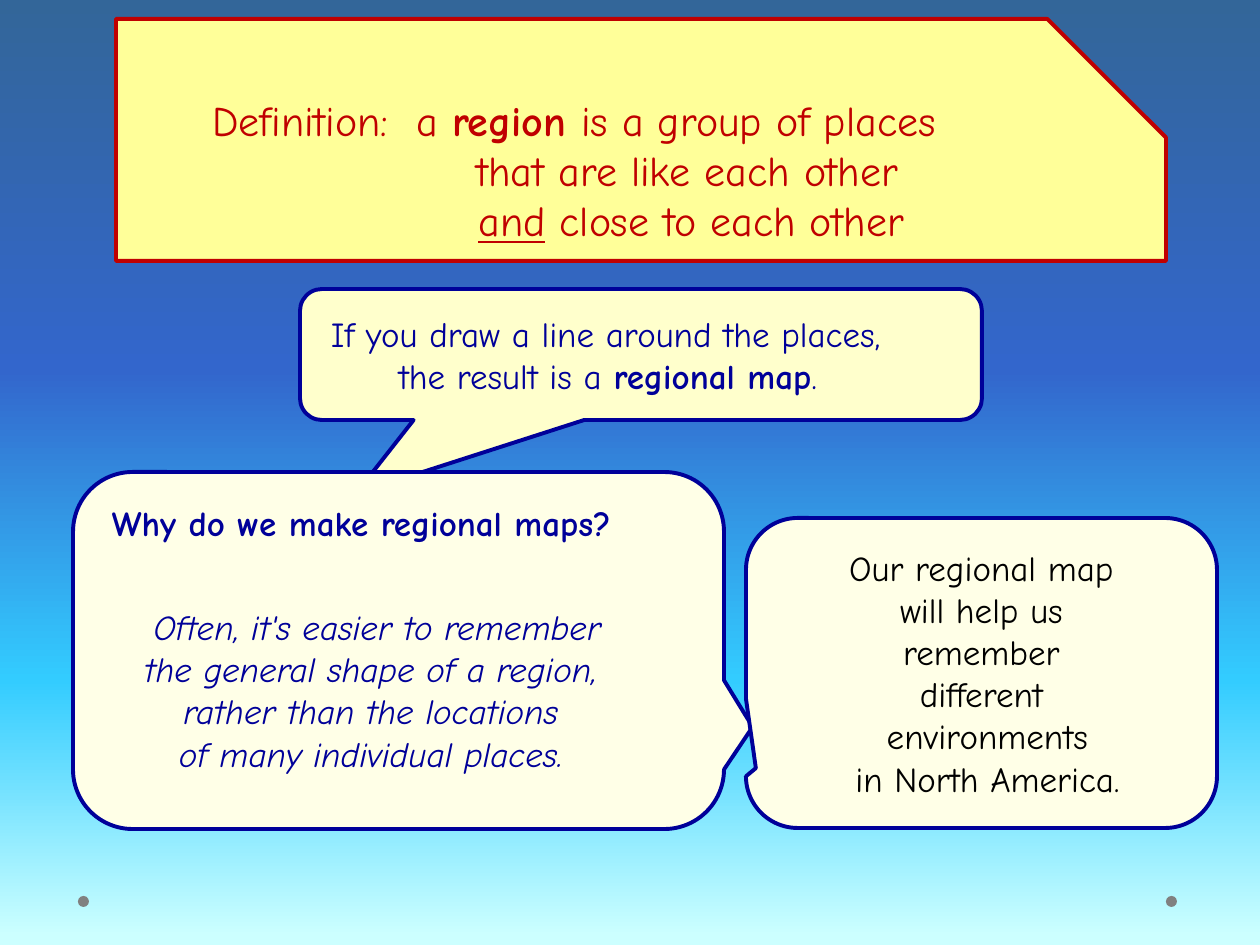
from lxml import etree
from pptx import Presentation
from pptx.dml.color import RGBColor
from pptx.enum.shapes import MSO_SHAPE as Shape
from pptx.enum.text import MSO_ANCHOR as Anchor, PP_ALIGN as Align
from pptx.oxml.ns import qn
from pptx.util import Pt

PX = 914400 / 126
RED, NAVY, BLACK, IVORY, GREY = "C00000", "000099", "000000", "FFFFE7", "808080"
BOLD, UNDERLINE = {"bold": True}, {"underline": True}


def paint(target, color):
    """Give a fill or a font a solid colour."""
    if hasattr(target, "solid"):
        target.solid()
        target.fore_color.rgb = RGBColor.from_string(color)
    else:
        target.color.rgb = RGBColor.from_string(color)


def add_panel(preset, box, fill, line=None, adjustments=()):
    """Add a flat preset shape; box is left, top, width, height in px."""
    panel = slide.shapes.add_shape(preset, *(round(v * PX) for v in box))
    panel.shadow.inherit = False
    paint(panel.fill, fill)
    if line:
        paint(panel.line.fill, line)
        panel.line.width = Pt(2.25)
    else:
        panel.line.fill.background()
    for i, value in enumerate(adjustments):
        panel.adjustments[i] = value
    return panel


prs = Presentation()
prs.slide_width, prs.slide_height = round(1260 * PX), round(945 * PX)
slide = prs.slides.add_slide(prs.slide_layouts[6])

# Background: sky gradient from top to bottom
sky = slide.background.fill
sky.gradient()
gradient = slide._element.find(".//" + qn("a:gradFill"))
stops = gradient.find(qn("a:gsLst"))
for stop in list(stops):
    stops.remove(stop)
for percent, color in [(0, "336699"), (39, "3366CC"), (72, "33CCFF"), (99, "CCFFFF")]:
    stop = etree.SubElement(stops, qn("a:gs"), pos=str(percent * 1000))
    etree.SubElement(stop, qn("a:srgbClr"), val=color)
gradient.find(qn("a:lin")).set("ang", "5400000")

# Footer dots
for left in (1166, 78):
    add_panel(Shape.OVAL, (left, 896, 11, 11), GREY)

# Panels: look, text format, then lines of (left indent, right indent, runs)
CALLOUT = Shape.ROUNDED_RECTANGULAR_CALLOUT
panels = [
    # Definition
    (Shape.SNIP_1_RECTANGLE, (116, 19, 1050, 242), "FFFF99", RED, (0.49,),
     RED, {"size": Pt(24)}, Align.LEFT, Anchor.MIDDLE, [
         (84, 0, [("Definition:  a ", {}), ("region ", BOLD), ("is a group of places", {})]),
         (348, 0, [("that are like each other", {})]),
         (350, 0, [("and", UNDERLINE), (" close to each other", {})])]),
    # Regional map
    (CALLOUT, (300, 289, 682, 131), "FFFFCC", NAVY, (-0.418, 1.061, 0.167),
     NAVY, {"size": Pt(20)}, Align.LEFT, Anchor.MIDDLE, [
         (12, 0, [("If you draw a line around the places,", {})]),
         (80, 0, [("the result is a ", {}), ("regional map", BOLD), (".", {})])]),
    # Question
    (CALLOUT, (73, 472, 651, 357), IVORY, NAVY, (0.544, 0.214, 0.167),
     NAVY, {"size": Pt(20)}, Align.LEFT, Anchor.TOP, [
         (9, 0, [("Why do we make regional maps?", BOLD)])]),
    # Answer
    (CALLOUT, (94, 577, 567, 226), IVORY, None, (-0.479, 0.307, 0.167),
     NAVY, {"size": Pt(20), "italic": True}, Align.CENTER, Anchor.MIDDLE, [
         (0, 0, [("Often, it's easier to remember", {})]),
         (0, 13, [("the general shape of a region,", {})]),
         (0, 13, [("rather than the locations", {})]),
         (0, 13, [("of many individual places.", {})])]),
    # Purpose
    (CALLOUT, (746, 518, 471, 310), IVORY, NAVY, (-0.479, 0.307, 0.167),
     BLACK, {"size": Pt(20)}, Align.CENTER, Anchor.MIDDLE, [
         (0, 0, [("Our regional map", {})]),
         (0, 0, [("will help us", {})]),
         (0, 0, [("remember", {})]),
         (0, 0, [("different", {})]),
         (12, 0, [("environments", {})]),
         (12, 0, [("in North America.", {})])]),
]

for preset, box, fill, line, adjustments, ink, style, align, anchor, lines in panels:
    frame = add_panel(preset, box, fill, line, adjustments).text_frame
    frame.word_wrap = True
    frame.vertical_anchor = anchor
    if anchor == Anchor.TOP:
        frame.margin_top = round(12 * PX)
    for number, (indent_left, indent_right, runs) in enumerate(lines):
        paragraph = frame.add_paragraph() if number else frame.paragraphs[0]
        paragraph.alignment = align
        properties = paragraph._p.get_or_add_pPr()
        properties.set("marL", str(round(indent_left * PX)))
        properties.set("marR", str(round(indent_right * PX)))
        for words, emphasis in runs:
            run = paragraph.add_run()
            run.text = words
            paint(run.font, ink)
            for key, value in {"name": "Comic Neue", **style, **emphasis}.items():
                setattr(run.font, key, value)

prs.save("out.pptx")
